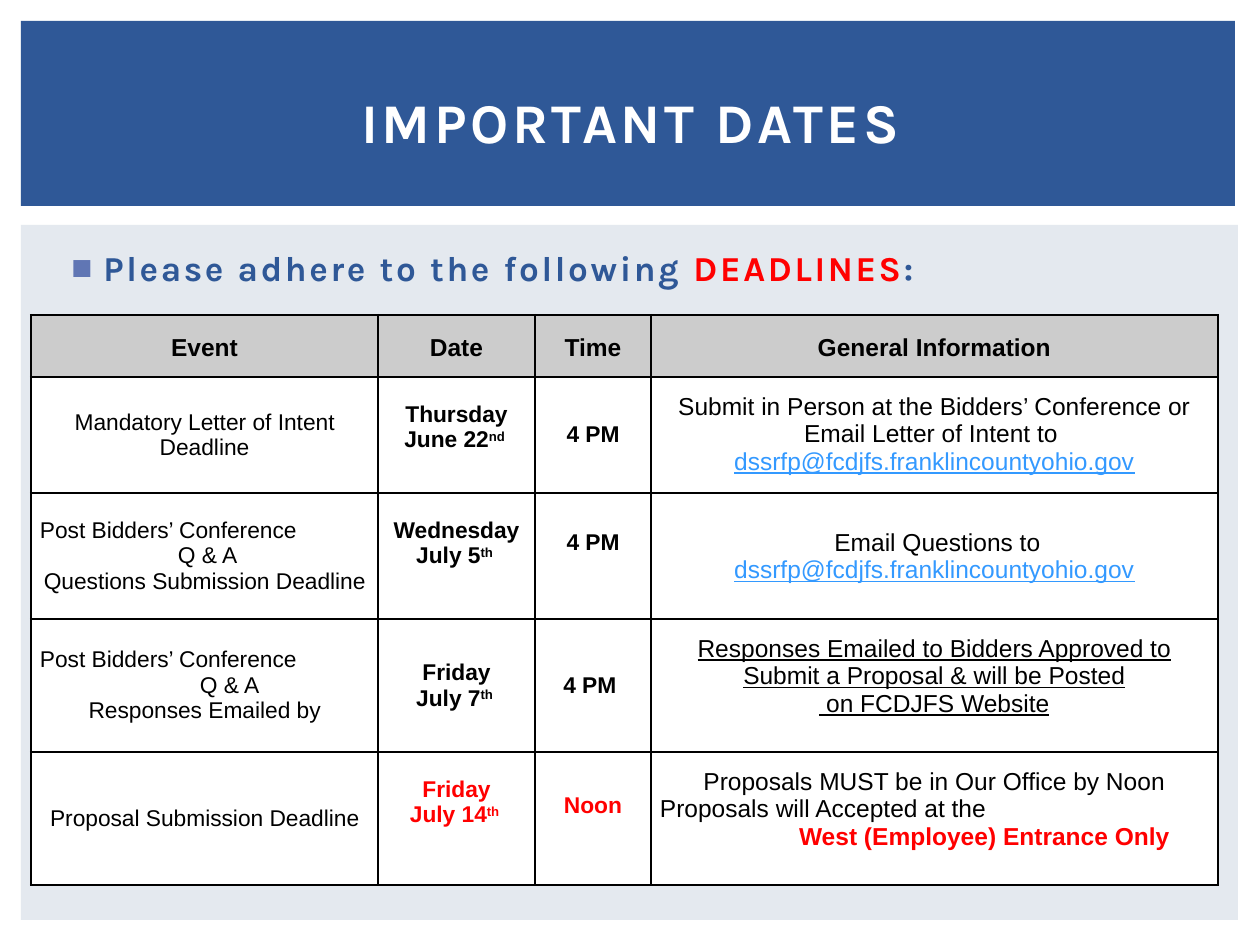
from dataclasses import dataclass

from lxml import etree
from pptx import Presentation
from pptx.dml.color import RGBColor
from pptx.enum.shapes import MSO_SHAPE
from pptx.enum.text import MSO_ANCHOR, PP_ALIGN
from pptx.oxml.ns import qn
from pptx.util import Emu, Pt

LEFT, MID = PP_ALIGN.LEFT, PP_ALIGN.CENTER
TOP, CENTER = MSO_ANCHOR.TOP, MSO_ANCHOR.MIDDLE
RECT = MSO_SHAPE.RECTANGLE


@dataclass(frozen=True)
class Theme:
    blue: str = "2F5897"
    pale: str = "E4E9EF"
    mark: str = "6076B4"
    red: str = "FF0000"
    link: str = "3399FF"
    grey: str = "CCCCCC"
    white: str = "FFFFFF"
    black: str = "000000"
    head: str = "Karla"
    body: str = "Arial"
    title: int = 32
    lead: int = 20
    info: int = 14
    text: int = 13
    thin: float = 1
    thick: float = 1.5


T = Theme()


@dataclass(frozen=True)
class Run:
    text: str
    size: int = T.text
    color: str = T.black
    bold: bool = False
    under: bool = False
    sup: bool = False
    font: str = T.body
    space: int = 0  # hundredths of a point


@dataclass(frozen=True)
class Para:
    runs: tuple[Run, ...]
    align: PP_ALIGN = MID
    indent: int = 0
    lead: float = 1.0


@dataclass(frozen=True)
class Cell:
    paras: tuple[Para, ...]
    anchor: MSO_ANCHOR = CENTER
    top: int = 0
    base: int = 0
    fill: str = T.white


def px(num: int) -> Emu:
    return Emu(round(num * 914400 / 126))


def rgb(code: str) -> RGBColor:
    return RGBColor.from_string(code)


# Text
def add_run(par, run: Run) -> None:
    out = par.add_run()
    out.text = run.text
    font = out.font
    font.name, font.size = run.font, Pt(run.size)
    font.bold, font.underline = run.bold, run.under
    font.color.rgb = rgb(run.color)
    props = out._r.get_or_add_rPr()
    if run.sup:
        props.set("baseline", "30000")
    if run.space:
        props.set("spc", str(run.space))


def write(frame, paras: tuple[Para, ...]) -> None:
    for num, para in enumerate(paras):
        par = frame.add_paragraph() if num else frame.paragraphs[0]
        par.alignment, par.line_spacing = para.align, para.lead
        if para.indent:
            par._p.get_or_add_pPr().set("marL", str(px(para.indent)))
        for run in para.runs:
            add_run(par, run)


def add_text(slide, box: tuple[int, ...], para: Para, anchor: MSO_ANCHOR):
    frame = slide.shapes.add_textbox(*map(px, box)).text_frame
    frame.word_wrap, frame.vertical_anchor = True, anchor
    write(frame, (para,))
    return frame.paragraphs[0]


def add_mark(par, hang: int) -> None:
    props = par._p.get_or_add_pPr()
    props.set("indent", str(-px(hang)))
    color = etree.SubElement(props, qn("a:buClr"))
    etree.SubElement(color, qn("a:srgbClr"), val=T.mark)
    etree.SubElement(props, qn("a:buFont"), typeface=T.body)
    etree.SubElement(props, qn("a:buChar"), char="■")


# Panels and table
def add_panel(slide, box: tuple[int, ...], fill: str) -> None:
    shape = slide.shapes.add_shape(RECT, *map(px, box))
    shape.shadow.inherit = False
    shape.fill.solid()
    shape.fill.fore_color.rgb = rgb(fill)
    shape.line.fill.background()


def add_edge(cell, side: str, width: float) -> None:
    props = cell._tc.get_or_add_tcPr()
    line = etree.SubElement(props, qn(f"a:ln{side}"), w=str(Pt(width)))
    fill = etree.SubElement(line, qn("a:solidFill"))
    etree.SubElement(fill, qn("a:srgbClr"), val=T.black)


def add_grid(slide, at: tuple[int, int], cols: tuple[int, ...],
             rows: tuple[int, ...], data: tuple[tuple[Cell, ...], ...]) -> None:
    box = (*at, sum(cols), sum(rows))
    grid = slide.shapes.add_table(len(rows), len(cols), *map(px, box)).table
    grid.first_row = grid.horz_banding = False
    for col, width in zip(grid.columns, cols):
        col.width = px(width)
    for row, height in zip(grid.rows, rows):
        row.height = px(height)
    for r, line in enumerate(data):
        for c, item in enumerate(line):
            cell = grid.cell(r, c)
            outer = {"L": c == 0, "R": c == len(cols) - 1,
                     "T": r == 0, "B": r == len(rows) - 1}
            for side, edge in outer.items():
                add_edge(cell, side, T.thick if edge else T.thin)
            cell.fill.solid()
            cell.fill.fore_color.rgb = rgb(item.fill)
            cell.margin_left = cell.margin_right = px(9)
            cell.margin_top, cell.margin_bottom = px(item.top), px(item.base)
            cell.vertical_anchor = item.anchor
            write(cell.text_frame, item.paras)


# Cell kinds
def line(text: str, align: PP_ALIGN = MID, indent: int = 0, **look) -> Para:
    return Para((Run(text, **look),), align, indent)


def head(text: str) -> Cell:
    run = Run(text, T.info, bold=True)
    return Cell((Para((run,), lead=1.15),), fill=T.grey)


def event(*paras: Para) -> Cell:
    return Cell(paras)


def date(day: str, when: str, end: str, color: str = T.black,
         anchor: MSO_ANCHOR = TOP) -> Cell:
    runs = (Run(when, color=color, bold=True),
            Run(f"{end} ", color=color, bold=True, sup=True))
    return Cell((line(day, color=color, bold=True), Para(runs)), anchor,
                top=25 if anchor == TOP else 0)


def time(text: str, base: int = 0, color: str = T.black) -> Cell:
    return Cell((line(text, color=color, bold=True),), base=base)


def info(*paras: Para, top: int = 16) -> Cell:
    return Cell(paras, TOP, top)


def main() -> None:
    deck = Presentation()
    deck.slide_width, deck.slide_height = px(1260), px(945)
    slide = deck.slides.add_slide(deck.slide_layouts[6])

    # Background panels
    add_panel(slide, (21, 225, 1217, 695), T.pale)
    add_panel(slide, (21, 21, 1214, 185), T.blue)

    # Title and lead line
    title = Run("IMPORTANT DATES", T.title, T.white, True,
                font=T.head, space=200)
    add_text(slide, (53, 49, 1155, 145), Para((title,)), CENTER)
    words = (("Please adhere to the following ", T.blue),
             ("DEADLINES", T.red), (":", T.blue))
    lead = tuple(Run(text, T.lead, color, True, font=T.head, space=150)
                 for text, color in words)
    par = add_text(slide, (53, 240, 1158, 60), Para(lead, LEFT, 38), TOP)
    add_mark(par, 32)

    # Deadlines table
    mail = line("dssrfp@fcdjfs.franklincountyohio.gov", size=T.info,
                color=T.link, under=True)
    post = line("Post Bidders’ Conference", LEFT)
    data = (
        tuple(map(head, ("Event", "Date", "Time", "General Information"))),
        (event(line("Mandatory Letter of Intent Deadline")),
         date("Thursday", "June 22", "nd"), time("4 PM"),
         info(line("Submit in Person at the Bidders’ Conference or "
                   "Email Letter of Intent to ", size=T.info), mail)),
        (event(post, line("Q & A", indent=6),
               line("Questions Submission Deadline")),
         date("Wednesday", "July 5", "th"), time("4 PM", 26),
         info(line("Email Questions to", indent=6, size=T.info), mail,
              top=36)),
        (event(post, line("Q & A", indent=50), line("Responses Emailed by")),
         date("Friday", "July 7", "th", anchor=CENTER), time("4 PM "),
         info(line("Responses Emailed to Bidders Approved to Submit a "
                   "Proposal & will be Posted", size=T.info, under=True),
              line(" on FCDJFS Website", size=T.info, under=True))),
        (event(line("Proposal Submission Deadline")),
         date("Friday", "July 14", "th", T.red), time("Noon", 25, T.red),
         info(line("Proposals MUST be in Our Office by Noon", size=T.info),
              line("Proposals will Accepted at the", LEFT, size=T.info),
              line("West (Employee) Entrance Only", indent=100,
                   size=T.info, color=T.red, bold=True))),
    )
    add_grid(slide, (31, 315), (347, 157, 116, 567),
             (62, 116, 126, 133, 133), data)
    deck.save("out.pptx")


if __name__ == "__main__":
    main()
